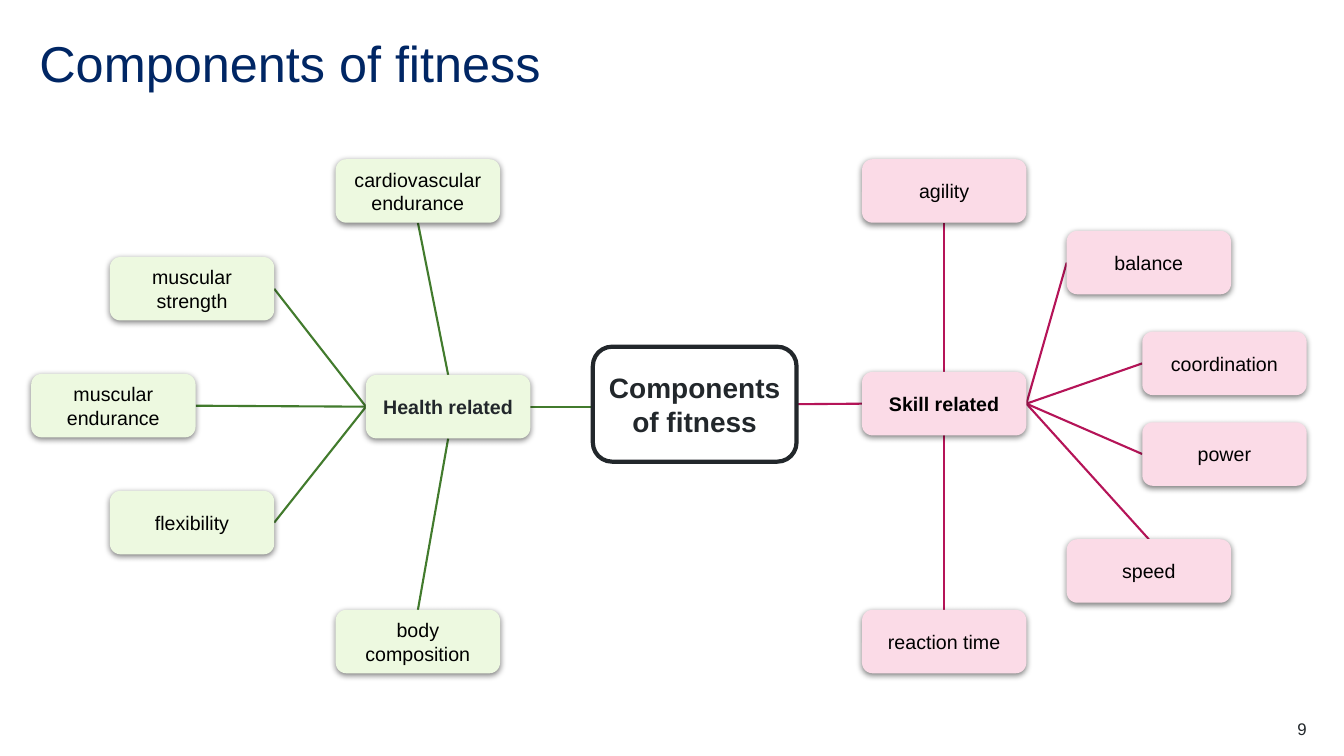
from lxml import etree
from pptx import Presentation
from pptx.dml.color import RGBColor
from pptx.enum.shapes import MSO_CONNECTOR, MSO_SHAPE
from pptx.enum.text import MSO_ANCHOR, PP_ALIGN
from pptx.oxml.ns import qn
from pptx.util import Pt

PX = 9144
STRAIGHT = MSO_CONNECTOR.STRAIGHT
ROUNDED = MSO_SHAPE.ROUNDED_RECTANGLE
TOP_ANCHOR, MIDDLE = MSO_ANCHOR.TOP, MSO_ANCHOR.MIDDLE
LEFT_ALIGN, CENTER, RIGHT_ALIGN = PP_ALIGN.LEFT, PP_ALIGN.CENTER, PP_ALIGN.RIGHT
TOP, LEFT, BOTTOM, RIGHT = range(4)
BOX_W, BOX_H = 163, 63
COLORS = {
    "navy": "002664", "ink": "22272B", "black": "000000", "white": "FFFFFF",
    "green": "427B2D", "pale_green": "EDF9E0",
    "pink": "B51458", "pale_pink": "FBDBE7",
}
HEALTH = [
    ("cardiovascular endurance", 333, 158, TOP, BOTTOM),
    ("muscular strength", 109, 255, LEFT, RIGHT),
    ("muscular endurance", 31, 371, LEFT, RIGHT),
    ("flexibility", 109, 487, LEFT, RIGHT),
    ("body composition", 333, 605, BOTTOM, TOP),
]
SKILL = [
    ("agility", 855, 158, TOP, BOTTOM),
    ("balance", 1058, 229, RIGHT, LEFT),
    ("coordination", 1133, 329, RIGHT, LEFT),
    ("power", 1133, 419, RIGHT, LEFT),
    ("speed", 1058, 535, RIGHT, TOP),
    ("reaction time", 855, 605, BOTTOM, TOP),
]


def rgb(name):
    return RGBColor.from_string(COLORS[name])


def write(tf, text, size=14, color="black", bold=False, align=CENTER,
          anchor=MIDDLE, inset=(9, 4), spacing=None):
    tf.word_wrap = True
    tf.vertical_anchor = anchor
    tf.margin_left = tf.margin_right = inset[0] * PX
    tf.margin_top = tf.margin_bottom = inset[1] * PX
    p = tf.paragraphs[0]
    p.alignment = align
    if spacing:
        p.line_spacing = spacing
    r = p.add_run()
    r.text = text
    r.font.name = "Arial"
    r.font.size = Pt(size)
    r.font.bold = bold
    r.font.color.rgb = rgb(color)


def place(sp, x, y, w, h):
    sp.left, sp.top, sp.width, sp.height = (v * PX for v in (x, y, w, h))


def add_shadow(sp):
    effects = sp.element.spPr.find(qn("a:effectLst"))
    shadow = etree.SubElement(effects, qn("a:outerShdw"), blurRad=str(Pt(4.5)),
                              dist=str(Pt(1.5)), dir="5400000", rotWithShape="0")
    color = etree.SubElement(shadow, qn("a:srgbClr"), val=COLORS["black"])
    etree.SubElement(color, qn("a:alpha"), val="50000")


def add_box(s, text, x, y, fill, w=BOX_W, h=BOX_H, outline=None, **fmt):
    sp = s.shapes.add_shape(ROUNDED, x * PX, y * PX, w * PX, h * PX)
    sp.shadow.inherit = False
    sp.fill.solid()
    sp.fill.fore_color.rgb = rgb(fill)
    if outline:
        sp.line.color.rgb = rgb(outline)
        sp.line.width = Pt(3)
    else:
        sp.line.fill.background()
        add_shadow(sp)
    write(sp.text_frame, text, **fmt)
    return sp


def add_line(s, color, start, start_side, end=None, end_side=None, point=(0, 0)):
    line = s.shapes.add_connector(STRAIGHT, 0, 0, *point)
    line.begin_connect(start, start_side)
    if end is not None:
        line.end_connect(end, end_side)
    line.line.color.rgb = rgb(color)
    line.line.width = Pt(1.5)
    etree.SubElement(line.element.spPr, qn("a:effectLst"))
    s.shapes.element.insert(2, line.element)


def add_branch(s, hub, items, fill, color):
    for text, x, y, hub_side, side in items:
        add_line(s, color, hub, hub_side, add_box(s, text, x, y, fill), side)


def main():
    prs = Presentation()
    prs.slide_width, prs.slide_height = 1333 * PX, 750 * PX
    s = prs.slides.add_slide(prs.slide_layouts[5])

    title = s.shapes.title
    place(title, 39, 39, 1256, 60)
    write(title.text_frame, "Components of fitness", size=36, color="navy",
          align=LEFT_ALIGN, anchor=TOP_ANCHOR, inset=(0, 0), spacing=0.9)

    center = add_box(s, "Components of fitness", 588, 344, "white", w=202, h=114,
                     outline="ink", size=20, color="ink", bold=True)
    health = add_box(s, "Health related", 363, 372, "pale_green",
                     color="ink", bold=True)
    skill = add_box(s, "Skill related", 855, 369, "pale_pink", bold=True)

    add_branch(s, health, HEALTH, "pale_green", "green")
    add_branch(s, skill, SKILL, "pale_pink", "pink")
    add_line(s, "green", health, RIGHT,
             point=(590 * PX, health.top + health.height // 2))
    add_line(s, "pink", skill, LEFT, center, RIGHT)

    number = s.shapes.add_textbox(1217 * PX, 713 * PX, 79 * PX, 20 * PX)
    write(number.text_frame, "9", size=12, color="ink", align=RIGHT_ALIGN,
          anchor=TOP_ANCHOR, inset=(0, 0))
    prs.save("out.pptx")


if __name__ == "__main__":
    main()
